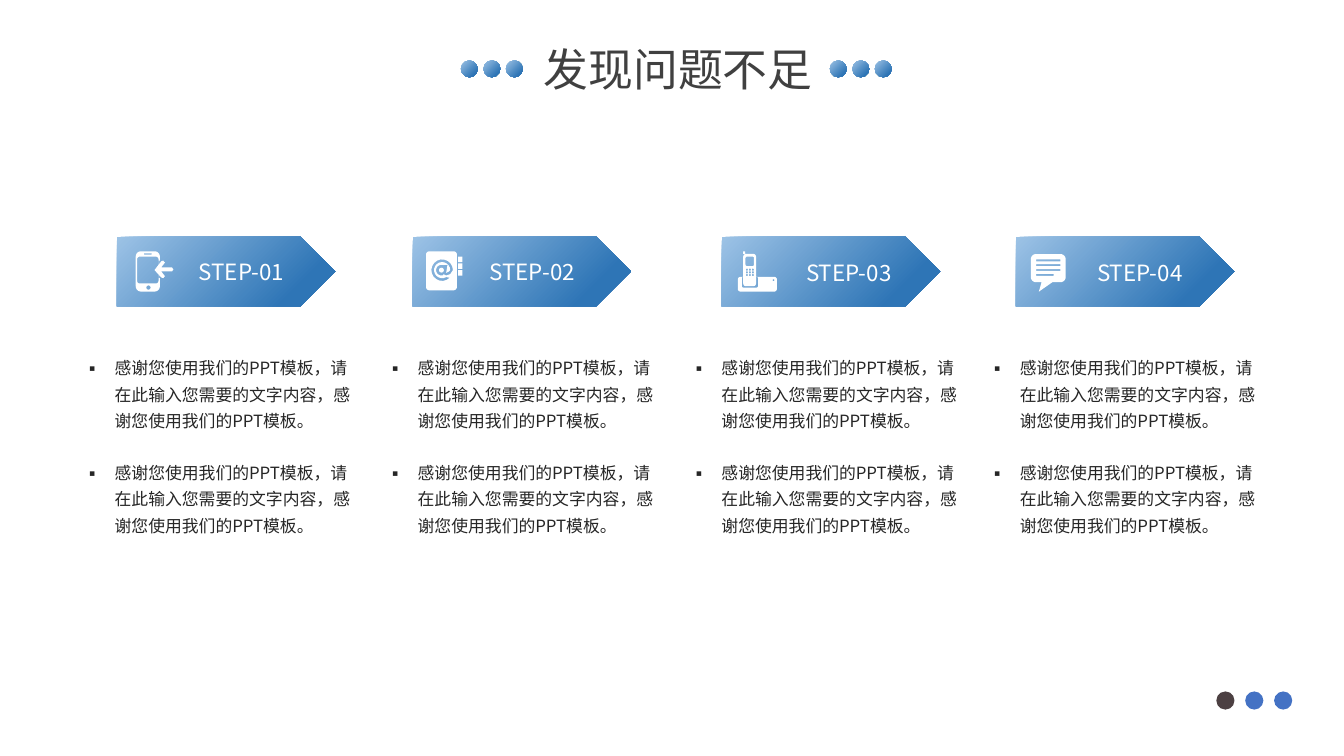
from math import cos, radians, sin

from pptx import Presentation
from pptx.dml.color import RGBColor
from pptx.enum.shapes import MSO_SHAPE
from pptx.enum.text import MSO_AUTO_SIZE, PP_ALIGN
from pptx.oxml.ns import qn
from pptx.util import Inches, Pt

THEME = {
    "font": "Noto Sans CJK SC",
    "title": {"size": 24, "color": "404040"},
    "step": {"size": 12, "color": "FFFFFF"},
    "body": {"size": 9, "color": "262626"},
    "gradient": [(0, "9DC3E6"), (0.81, "2E75B6")],
    "icon": "FFFFFF",
    "page_dots": ["4C4042", "4472C4", "4472C4"],
}

# Widescreen slide, 16 by 9
presentation = Presentation()
presentation.slide_width = Inches(10)
presentation.slide_height = presentation.slide_width * 9 // 16
slide = presentation.slides.add_slide(presentation.slide_layouts[6])

# Grid: 1000 columns across the slide, square cells
cell = presentation.slide_width // 1000
ARROW_TOP, ARROW_WIDTH, ARROW_HEIGHT = 176, 162.5, 52
BODY_TOP, BODY_WIDTH, BODY_HEIGHT = 257, 220, 148


def arc(x, y, radius, start, end, steps=16):
    """Points along an arc, angles in degrees clockwise from the right."""
    angles = [radians(start + (end - start) * i / steps) for i in range(steps + 1)]
    return [(x + radius * cos(a), y + radius * sin(a)) for a in angles]


def rounded(left, top, width, height, radius=0):
    """Outline of a rectangle with rounded corners."""
    right, bottom = left + width - radius, top + height - radius
    left, top = left + radius, top + radius
    corners = [(right, bottom), (left, bottom), (left, top), (right, top)]
    return [point for i, (x, y) in enumerate(corners)
            for point in arc(x, y, radius, 90 * i, 90 * i + 90, 6)]


# Icon outlines, in cells from the corner of their arrow; inner outlines are holes
phone = [
    rounded(14, 11, 18, 30, 4),
    rounded(15, 15, 16, 20, 2),
    rounded(31, 18, 1, 13),
    rounded(20, 12.5, 6, 1, 0.5),
    arc(23.5, 38, 1.6, 0, 360),
    [(28, 25), (33, 18.5), (34.5, 18), (35.7, 19.5), (33, 23), (41, 23),
     (42, 24.5), (41, 26), (33, 26), (35.7, 29.5), (34.5, 31), (33, 30.5)],
]
at_sign = (
    arc(22, 25, 8, 45, 360)
    + [(28, 28), (25, 29), (23, 28)]
    + arc(21.5, 25, 4, 70, 290)
    + [(23, 21), (26, 21), (25, 27), (27, 26)]
    + arc(22, 25, 6, 360, 60)
)
address_book = [
    rounded(10, 11, 23, 29, 2.5),
    at_sign,
    arc(21.5, 25, 1.8, 0, 360),
    *[rounded(34, top, 3, 4) for top in (15, 20, 25)],
]
handset = [
    rounded(12, 30, 29, 11, 2),
    rounded(15, 30, 12, 8, 1),
    rounded(16, 13, 9.5, 24, 2),
    rounded(16, 11, 1.5, 2),
    rounded(17.7, 15, 6.3, 7, 1),
    *[rounded(18 + 2.2 * column, 24 + 2 * row, 1.5, 1.4, 0.4)
      for row in range(3) for column in range(3)],
    arc(38.5, 32.5, 0.7, 0, 360),
]
speech_bubble = [
    rounded(11, 13, 26, 21, 4),
    [(19, 34), (27, 34), (17, 41)],
    *[rounded(15, 17 + 3.6 * i, width, 1.4)
      for i, width in enumerate((18, 18, 18, 13))],
]

# Steps: arrow left, body left, label left, label top, icon
steps = [
    (87, 52.5, 138, 187, phone),
    (307, 278, 354.5, 187, address_book),
    (537, 504, 590, 188, handset),
    (756, 726, 806.5, 188, speech_bubble),
]

# Preset shapes: arrows, then title dots, then page dots
shapes = [(MSO_SHAPE.PENTAGON, step[0], ARROW_TOP, ARROW_WIDTH, ARROW_HEIGHT, None)
          for step in steps]
shapes += [(MSO_SHAPE.OVAL, left + 16.75 * i, 45, 12.5, 12.5, None)
           for left in (343, 617.5) for i in range(3)]
shapes += [(MSO_SHAPE.OVAL, 905 + 21.5 * i, 514.5, 13.5, 13.5, color)
           for i, color in enumerate(THEME["page_dots"])]
for kind, left, top, width, height, color in shapes:
    box = [int(value * cell) for value in (left, top, width, height)]
    shape = slide.shapes.add_shape(kind, *box)
    shape.shadow.inherit = False
    shape.line.fill.background()
    if color:
        shape.fill.solid()
        shape.fill.fore_color.rgb = RGBColor.from_string(color)
        continue
    shape.fill.gradient()
    shape.fill.gradient_angle = 315
    for stop, (position, stop_color) in zip(shape.fill.gradient_stops, THEME["gradient"]):
        stop.position = position
        stop.color.rgb = RGBColor.from_string(stop_color)

# White icons
for arrow_left, _, _, _, outlines in steps:
    contours = [[((arrow_left + x) * cell, (ARROW_TOP + y) * cell) for x, y in outline]
                for outline in outlines]
    builder = slide.shapes.build_freeform(*contours[0][0], scale=1.0)
    builder.add_line_segments(contours[0][1:], close=True)
    for contour in contours[1:]:
        builder.move_to(*contour[0])
        builder.add_line_segments(contour[1:], close=True)
    icon = builder.convert_to_shape()
    icon.shadow.inherit = False
    icon.line.fill.background()
    icon.fill.solid()
    icon.fill.fore_color.rgb = RGBColor.from_string(THEME["icon"])

# Text: style, left, top, width, height, paragraphs
sentence = "感谢您使用我们的PPT模板，请在此输入您需要的文字内容，感谢您使用我们的PPT模板。"
texts = [("title", 200, 26, 609, 50, ["发现问题不足"])]
for number, (_, body_left, label_left, label_top, _) in enumerate(steps, 1):
    texts.append(("step", label_left, label_top, 87, 30, [f"STEP-{number:02d}"]))
    texts.append(("body", body_left, BODY_TOP, BODY_WIDTH, BODY_HEIGHT, [sentence] * 2))

paragraph_formats = {
    "title": {"alignment": PP_ALIGN.CENTER},
    "step": {"alignment": PP_ALIGN.LEFT},
    "body": {"alignment": PP_ALIGN.LEFT, "line_spacing": 1.3},
}
for style, left, top, width, height, lines in texts:
    box = [int(value * cell) for value in (left, top, width, height)]
    frame = slide.shapes.add_textbox(*box).text_frame
    frame.word_wrap = style != "step"
    frame.auto_size = MSO_AUTO_SIZE.SHAPE_TO_FIT_TEXT
    for index, line in enumerate(lines):
        paragraph = frame.add_paragraph() if index else frame.paragraphs[0]
        for name, value in paragraph_formats[style].items():
            setattr(paragraph, name, value)
        if index:
            paragraph.space_before = Pt(14)
        run = paragraph.add_run()
        run.text = line
        run.font.name = THEME["font"]
        run.font.size = Pt(THEME[style]["size"])
        run.font.color.rgb = RGBColor.from_string(THEME[style]["color"])
        east_asian = run.font._element.makeelement(qn("a:ea"), {"typeface": THEME["font"]})
        run.font._element.append(east_asian)
        if style == "body":
            properties = paragraph._p.get_or_add_pPr()
            properties.set("marL", str(23 * cell))
            properties.set("indent", str(-23 * cell))
            for tag, attributes in (("a:buFont", {"typeface": THEME["font"]}),
                                    ("a:buChar", {"char": "▪"})):
                properties.append(properties.makeelement(qn(tag), attributes))

presentation.save("out.pptx")
